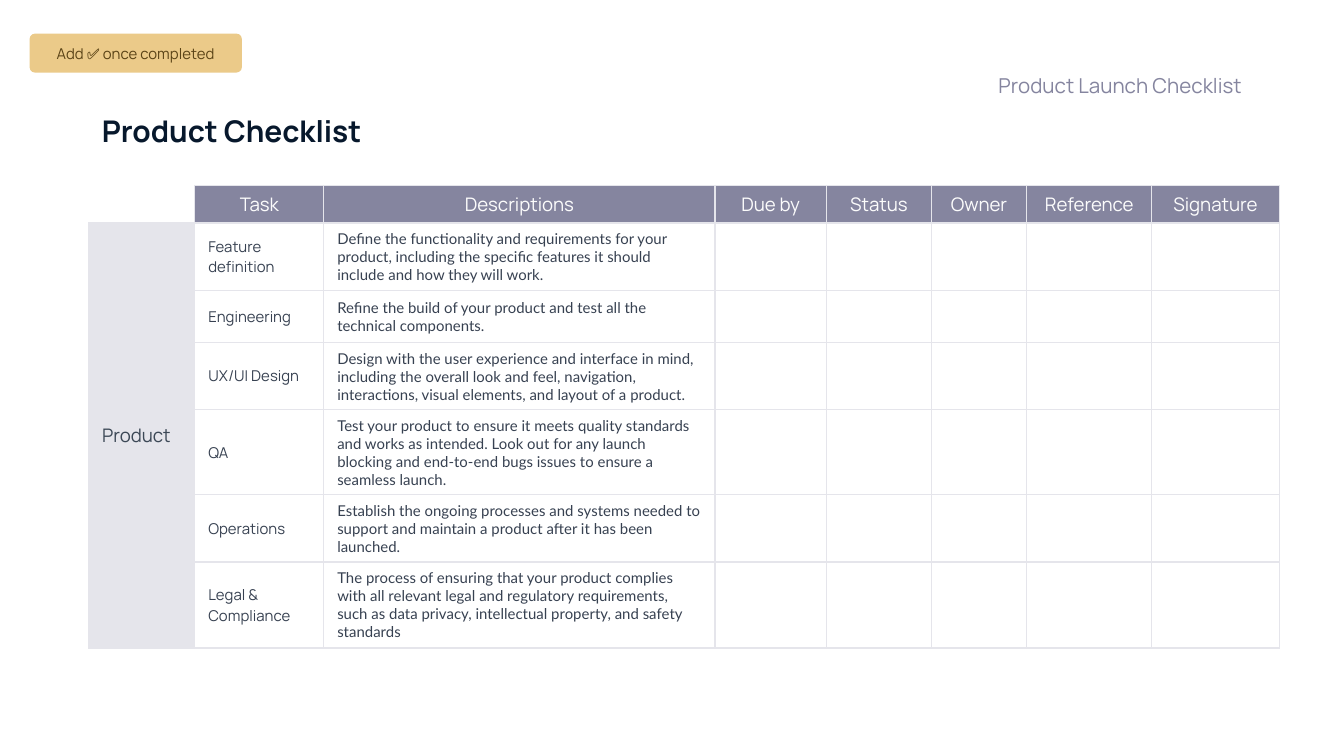
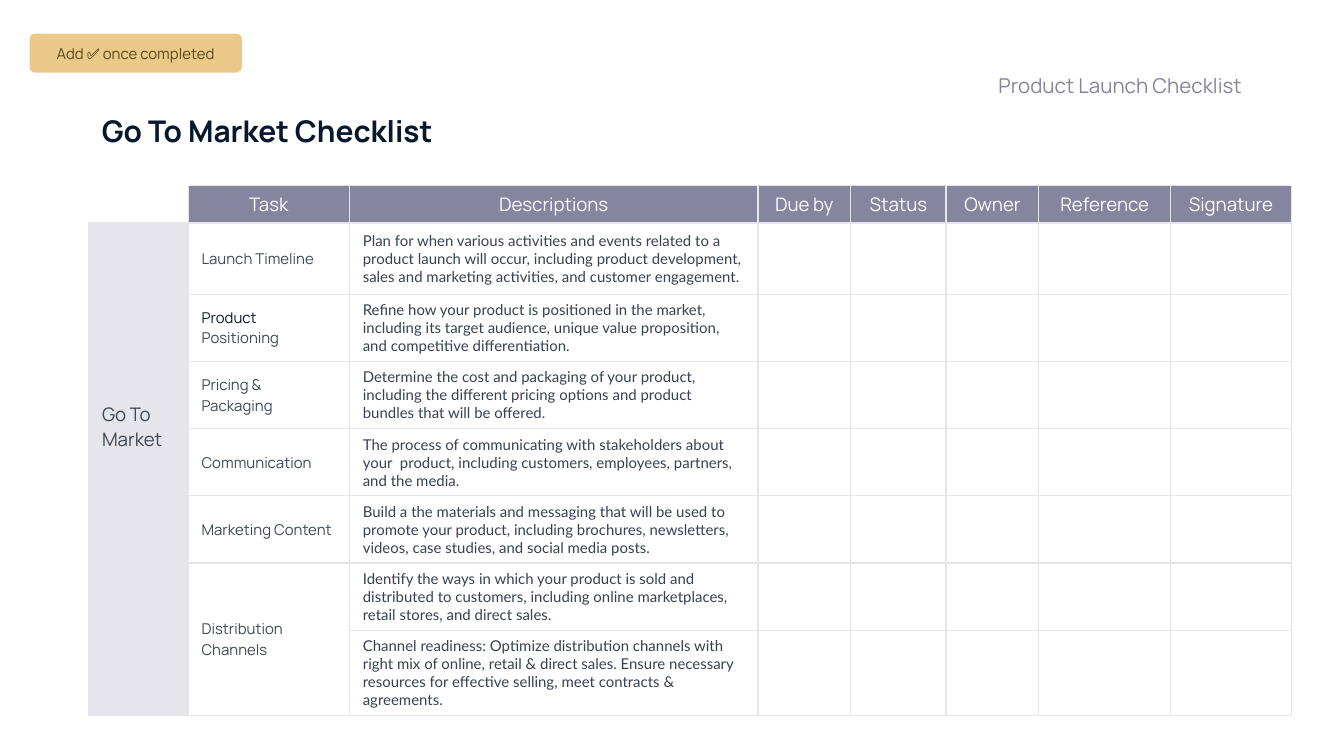
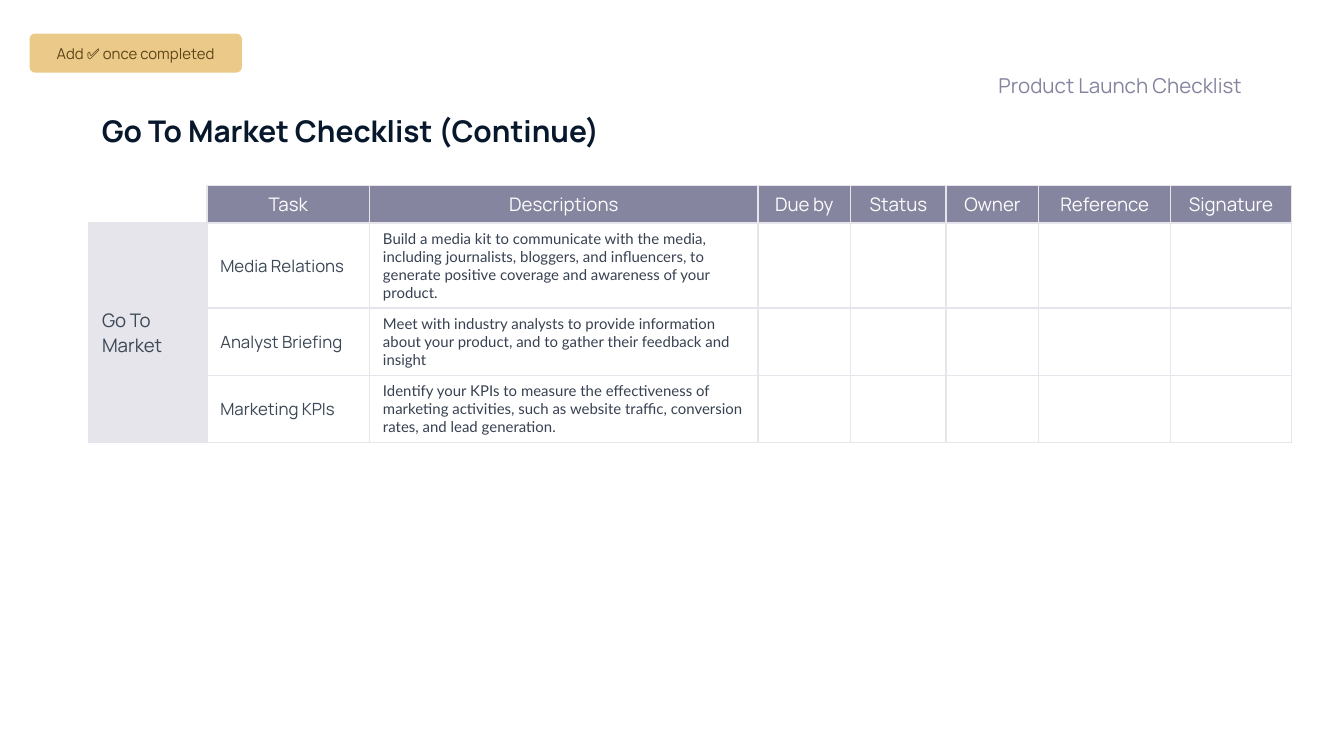
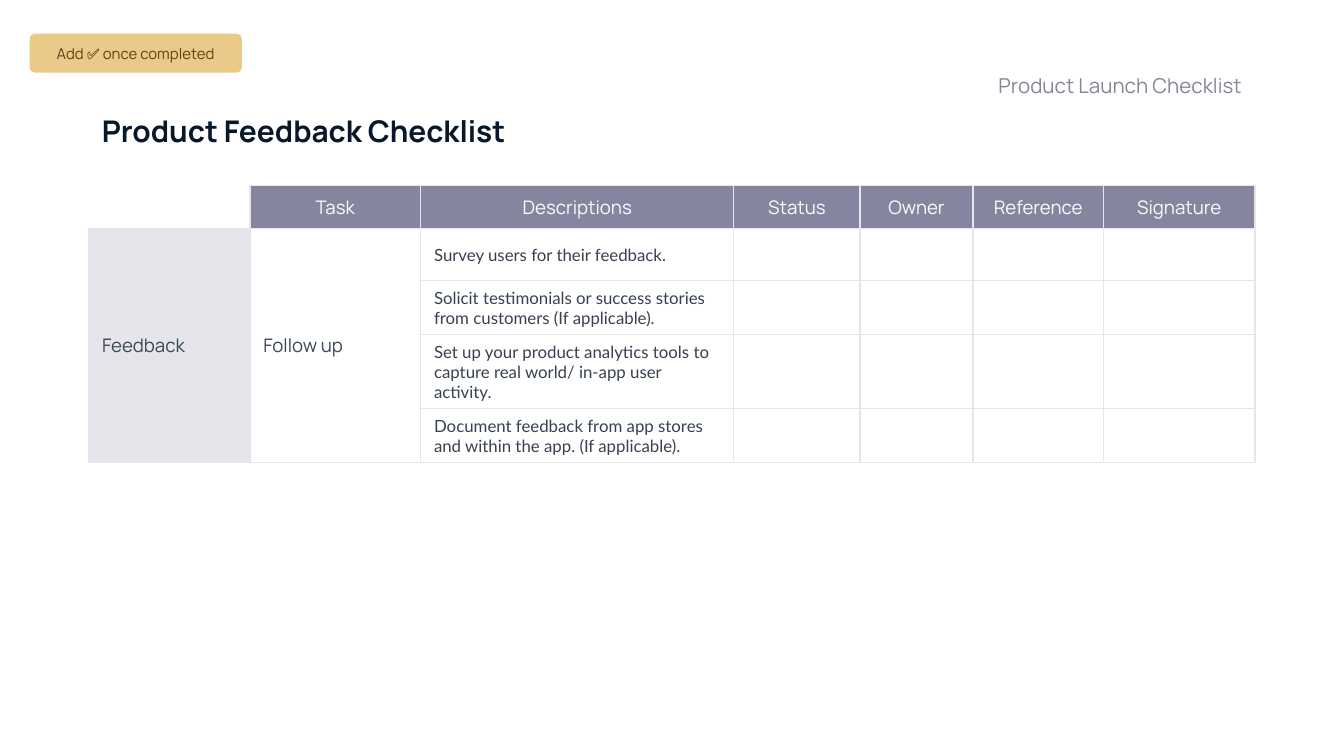
from dataclasses import dataclass

from lxml import etree
from pptx import Presentation
from pptx.dml.color import RGBColor
from pptx.enum.shapes import MSO_SHAPE
from pptx.enum.text import MSO_ANCHOR, PP_ALIGN
from pptx.oxml.ns import qn
from pptx.util import Inches, Pt

ROUND = MSO_SHAPE.ROUNDED_RECTANGLE
TOP, MIDDLE, BOTTOM = MSO_ANCHOR.TOP, MSO_ANCHOR.MIDDLE, MSO_ANCHOR.BOTTOM
LEFT, CENTER, RIGHT = PP_ALIGN.LEFT, PP_ALIGN.CENTER, PP_ALIGN.RIGHT

WIDE, HIGH = Inches(10), Inches(5.625)
GRID = 100
UNIT = WIDE / GRID

COLORS = {
    "navy": "07182C",
    "mauve": "85859F",
    "mist": "E5E5EB",
    "white": "FCFCFC",
    "slate": "3C4856",
    "gray": "374151",
    "gold": "EBCA89",
    "brown": "5A4316",
}
HEADS = ["Task", "Descriptions", "Due by", "Status", "Owner", "Reference", "Signature"]


@dataclass(frozen=True)
class Box:
    x: float
    y: float
    w: float
    h: float

    def place(self) -> tuple[int, int, int, int]:
        return span(self.x), span(self.y), span(self.w), span(self.h)


@dataclass(frozen=True)
class Style:
    size: float
    color: str
    font: str = "Manrope"
    bold: bool = False
    align: PP_ALIGN = LEFT
    anchor: MSO_ANCHOR = MIDDLE


@dataclass(frozen=True)
class Task:
    name: str
    notes: tuple[str, ...]
    lead: str = ""


@dataclass(frozen=True)
class Sheet:
    title: str
    group: str
    cols: list[float]
    rows: list[float]
    tasks: list[Task]
    heads: list[str]
    reach: int
    task: Style
    note: Style
    width: float = 64.9


TITLE = Style(16, "navy", bold=True, anchor=TOP)
TOPIC = Style(11, "mauve", align=RIGHT, anchor=BOTTOM)
BADGE = Style(8, "brown", align=CENTER)
HEAD = Style(10, "white", align=CENTER)
GROUP = Style(10, "slate")
NOTE = Style(8, "gray", font="Lato")

SHEETS = [
    Sheet(
        "Product Checklist", "Product",
        [7.9, 9.6, 29.1, 8.3, 7.8, 7.1, 9.3, 9.5],
        [2.8, 5, 3.9, 5, 6.3, 5, 6.4],
        [
            Task("Feature definition", (
                "Define the functionality and requirements for your product, including "
                "the specific features it should include and how they will work.",)),
            Task("Engineering", (
                "Refine the build of your product and test all the technical components.",)),
            Task("UX/UI Design", (
                "Design with the user experience and interface in mind, including the overall "
                "look and feel, navigation, interactions, visual elements, and layout of a product.",)),
            Task("QA", (
                "Test your product to ensure it meets quality standards and works as intended. "
                "Look out for any launch blocking and end-to-end bugs issues to ensure a "
                "seamless launch.",)),
            Task("Operations", (
                "Establish the ongoing processes and systems needed to support and maintain "
                "a product after it has been launched.",)),
            Task("Legal & Compliance", (
                "The process of ensuring that your product complies with all relevant legal "
                "and regulatory requirements, such as data privacy, intellectual property, "
                "and safety standards",)),
        ],
        HEADS, 6, Style(8, "gray"), NOTE, 32.4,
    ),
    Sheet(
        "Go To Market Checklist", "Go To Market",
        [7.4, 12, 30.4, 6.9, 7.1, 6.9, 9.8, 9],
        [2.8, 5.3, 5, 5, 5, 5, 5, 6.3],
        [
            Task("Launch Timeline", (
                "Plan for when various activities and events related to a product launch will "
                "occur, including product development, sales and marketing activities, and "
                "customer engagement.",)),
            Task("Positioning", (
                "Refine how your product is positioned in the market, including its target "
                "audience, unique value proposition, and competitive differentiation.",),
                "Product "),
            Task("Pricing & Packaging", (
                "Determine the cost and packaging of your product, including the different "
                "pricing options and product bundles that will be offered.",)),
            Task("Communication", (
                "The process of communicating with stakeholders about your  product, including "
                "customers, employees, partners, and the media.",)),
            Task("Marketing Content", (
                "Build a the materials and messaging that will be used to promote your product, "
                "including brochures, newsletters, videos, case studies, and social media posts.",)),
            Task("Distribution Channels", (
                "Identify the ways in which your product is sold and distributed to customers, "
                "including online marketplaces, retail stores, and direct sales.",
                "Channel readiness: Optimize distribution channels with right mix of online, "
                "retail & direct sales. Ensure necessary resources for effective selling, "
                "meet contracts & agreements.")),
        ],
        HEADS, 6, Style(8, "slate"), NOTE,
    ),
    Sheet(
        "Go To Market Checklist (Continue)", "Go To Market",
        [8.8, 12.1, 28.9, 6.9, 7.1, 6.9, 9.8, 9],
        [2.8, 6.3, 5, 5],
        [
            Task("Media Relations", (
                "Build a media kit to communicate with the media, including journalists, "
                "bloggers, and influencers, to generate positive coverage and awareness of "
                "your product.",)),
            Task("Analyst Briefing", (
                "Meet with industry analysts to provide information about your product, and "
                "to gather their feedback and insight",)),
            Task("Marketing KPIs", (
                "Identify your KPIs to measure the effectiveness of marketing activities, such "
                "as website traffic, conversion rates, and lead generation.",)),
        ],
        HEADS, 3, Style(9, "slate"), NOTE,
    ),
    Sheet(
        "Product Feedback Checklist", "Feedback",
        [12, 12.7, 23.3, 9.4, 8.4, 9.7, 11.3],
        [3.2, 3.9, 4, 5.5, 4],
        [
            Task("Follow up", (
                "Survey users for their feedback.",
                "Solicit testimonials or success stories from customers (If applicable).",
                "Set up your product analytics tools to capture real world/ in-app user activity.",
                "Document feedback from app stores and within the app. (If applicable).")),
        ],
        [head for head in HEADS if head != "Due by"],
        4, Style(10, "slate"), Style(9, "gray", font="Lato"),
    ),
]


def span(units: float) -> int:
    return round(units * UNIT)


def tint(name: str) -> RGBColor:
    return RGBColor.from_string(COLORS[name])


def write(para, text: str, style: Style, lead: str = "") -> None:
    para.alignment = style.align
    para.font.size = Pt(style.size)
    para.font.name = style.font
    para.font.bold = style.bold
    para.font.color.rgb = tint(style.color)
    if lead:
        run = para.add_run()
        run.text = lead
        run.font.color.rgb = tint("navy")
    para.add_run().text = text


def fill_frame(shape, text: str, style: Style, base: float = 1) -> None:
    frame = shape.text_frame
    frame.word_wrap = True
    frame.vertical_anchor = style.anchor
    frame.margin_left = frame.margin_right = frame.margin_top = span(1)
    frame.margin_bottom = span(base)
    write(frame.paragraphs[0], text, style)


def add_label(slide, box: Box, text: str, style: Style, base: float = 1) -> None:
    fill_frame(slide.shapes.add_textbox(*box.place()), text, style, base)


def add_badge(slide) -> None:
    badge = slide.shapes.add_shape(ROUND, *Box(2.2, 2.5, 15.8, 2.9).place())
    badge.adjustments[0] = 0.14
    badge.shadow.inherit = False
    badge.fill.solid()
    badge.fill.fore_color.rgb = tint("gold")
    badge.line.fill.background()
    fill_frame(badge, "Add ✅ once completed", BADGE)


def edge(cell, sides: str) -> None:
    props = cell._tc.get_or_add_tcPr()
    for side in sides:
        line = etree.SubElement(props, qn(f"a:ln{side}"), w=str(Pt(0.75)))
        solid = etree.SubElement(line, qn("a:solidFill"))
        etree.SubElement(solid, qn("a:srgbClr"), val=COLORS["mist"])


def paint(cell, row: int, col: int) -> None:
    edge(cell, "LRTB" if row or col else "RB")
    cell.vertical_anchor = MIDDLE
    if bool(row) == bool(col):
        cell.fill.background()
    else:
        cell.fill.solid()
        cell.fill.fore_color.rgb = tint("mist" if row else "mauve")
    if not cell.text_frame.text:
        para = cell.text_frame.paragraphs[0]
        etree.SubElement(para._p, qn("a:endParaRPr"), sz="800")


def put(cell, text: str, style: Style, lead: str = "") -> None:
    write(cell.text_frame.paragraphs[0], text, style, lead)


def add_grid(slide, sheet: Sheet) -> None:
    box = Box(6.6, 13.8, sum(sheet.cols), sum(sheet.rows))
    count = len(sheet.rows), len(sheet.cols)
    table = slide.shapes.add_table(*count, *box.place()).table
    table.first_row = table.horz_banding = False
    for col, width in zip(table.columns, sheet.cols):
        col.width = span(width)
    for row, height in zip(table.rows, sheet.rows):
        row.height = span(height)

    for col, head in enumerate(sheet.heads, 1):
        put(table.cell(0, col), head, HEAD)
    put(table.cell(1, 0), sheet.group, GROUP)
    table.cell(1, 0).merge(table.cell(sheet.reach, 0))

    row = 1
    for task in sheet.tasks:
        first = table.cell(row, 1)
        put(first, task.name, sheet.task, task.lead)
        if len(task.notes) > 1:
            first.merge(table.cell(row + len(task.notes) - 1, 1))
        for note in task.notes:
            put(table.cell(row, 2), note, sheet.note)
            row += 1

    for row in range(count[0]):
        for col in range(count[1]):
            paint(table.cell(row, col), row, col)


def main() -> None:
    deck = Presentation()
    deck.slide_width, deck.slide_height = WIDE, HIGH
    for sheet in SHEETS:
        slide = deck.slides.add_slide(deck.slide_layouts[6])
        add_label(slide, Box(6.6, 7.4, sheet.width, 4.7), sheet.title, TITLE)
        add_grid(slide, sheet)
        add_label(slide, Box(50, 4.6, 43.4, 3.3), "Product Launch Checklist", TOPIC, 0.6)
        add_badge(slide)
    deck.save("out.pptx")


if __name__ == "__main__":
    main()
